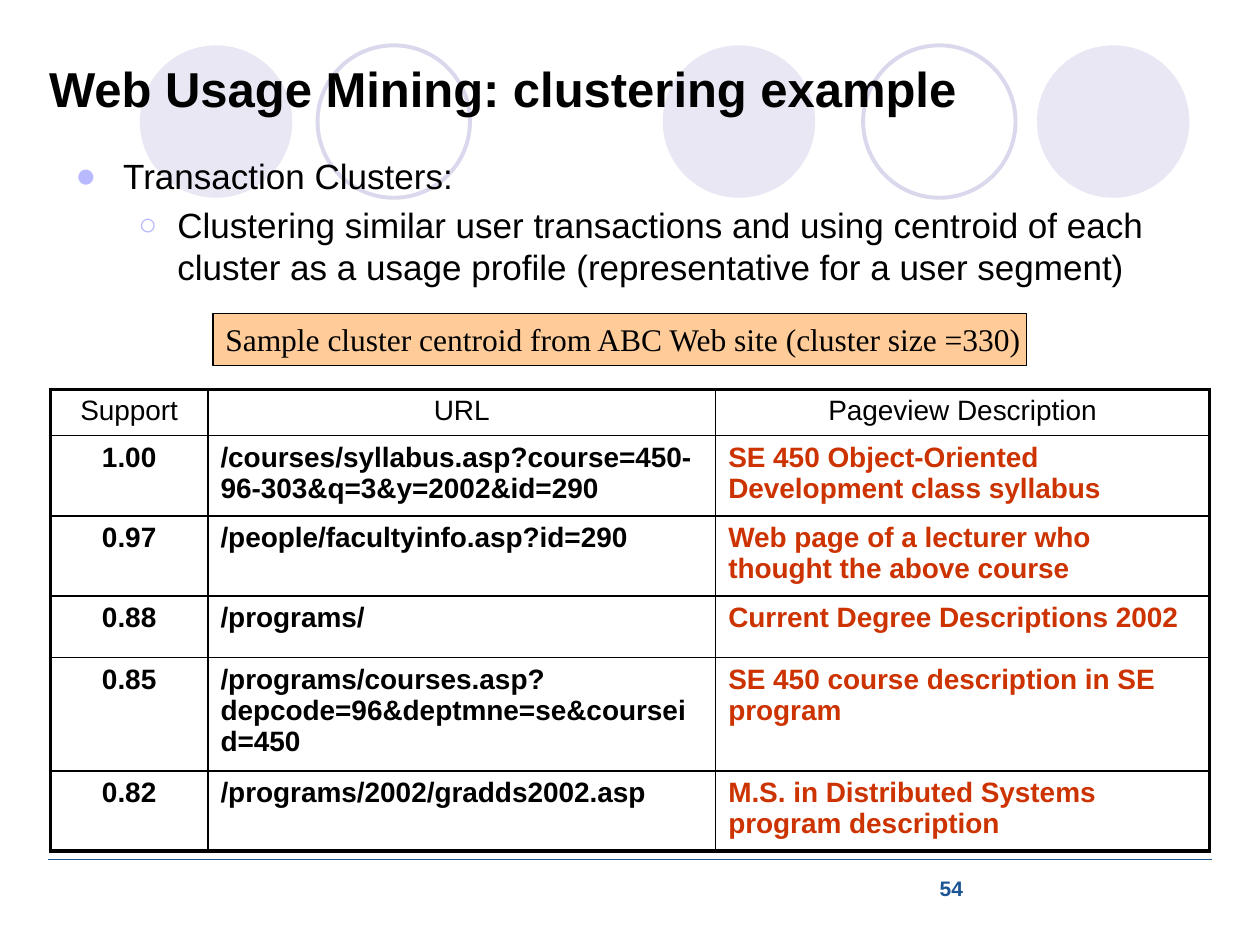
import dataclasses

import lxml.etree
import pptx
import pptx.dml.color
import pptx.enum.shapes
import pptx.enum.text
import pptx.oxml.ns
import pptx.util

Inches = pptx.util.Inches
Pt = pptx.util.Pt
Align = pptx.enum.text.PP_ALIGN
Anchor = pptx.enum.text.MSO_ANCHOR
AutoSize = pptx.enum.text.MSO_AUTO_SIZE
qn = pptx.oxml.ns.qn


@dataclasses.dataclass(frozen=True)
class Theme:
    """Colours, fonts and type sizes of the slide."""
    ink: str = "000000"
    accent: str = "CC3300"
    rule: str = "1B5595"
    disc: str = "E8E7F3"
    ring: str = "D9D8EC"
    bullet: str = "B9B9FF"
    banner: str = "FFCC99"
    sans: str = "Arial"
    serif: str = "Times New Roman"
    title_size: int = 28
    body_size: int = 20
    banner_size: int = 18
    table_size: int = 16
    number_size: int = 12
    thin: float = 1
    thick: float = 2.25


THEME = Theme()
CIRCLES = [(1.11, True), (2.52, False), (5.26, True), (6.85, False), (8.23, True)]
POINTS = [
    ("Transaction Clusters:", "●", 0.38, 0.38, 100),
    ("Clustering similar user transactions and using centroid of each cluster "
     "as a usage profile (representative for a user segment)", "○", 0.81, 0.31, 90),
]
COLUMN_WIDTHS = [1.25, 4.03, 3.92]
ROW_HEIGHTS = [0.34, 0.64, 0.63, 0.49, 0.84, 0.61]
PAGEVIEWS = [
    ("Support", "URL", "Pageview Description"),
    ("1.00", "/courses/syllabus.asp?course=450-96-303&q=3&y=2002&id=290",
     "SE 450 Object-Oriented Development class syllabus"),
    ("0.97", "/people/facultyinfo.asp?id=290",
     "Web page of a lecturer who thought the above course"),
    ("0.88", "/programs/", "Current Degree Descriptions 2002"),
    ("0.85", "/programs/courses.asp?depcode=96&deptmne=se&courseid=450",
     "SE 450 course description in SE program"),
    ("0.82", "/programs/2002/gradds2002.asp",
     "M.S. in Distributed Systems program description"),
]


def rgb(colour):
    """Turn a hex string into a colour."""
    return pptx.dml.color.RGBColor.from_string(colour)


def style(paragraph, size, colour=THEME.ink, bold=False, font=THEME.sans, align=Align.LEFT):
    """Align a paragraph and format its runs."""
    paragraph.alignment = align
    for run in paragraph.runs:
        run.font.size = Pt(size)
        run.font.name = font
        run.font.bold = bold
        run.font.color.rgb = rgb(colour)


def add_bullet(paragraph, mark, indent, hang, percent):
    """Give a paragraph a coloured bullet and a hanging indent."""
    properties = paragraph._p.get_or_add_pPr()
    properties.set("marL", str(Inches(indent)))
    properties.set("indent", str(-Inches(hang)))
    colour = lxml.etree.SubElement(properties, qn("a:buClr"))
    lxml.etree.SubElement(colour, qn("a:srgbClr"), val=THEME.bullet)
    lxml.etree.SubElement(properties, qn("a:buSzPct"), val=str(percent * 1000))
    lxml.etree.SubElement(properties, qn("a:buFont"), typeface=THEME.sans)
    lxml.etree.SubElement(properties, qn("a:buChar"), char=mark)


def add_border(cell, side, width):
    """Draw one edge of a table cell."""
    edge = lxml.etree.SubElement(cell._tc.get_or_add_tcPr(), qn("a:ln" + side), w=str(Pt(width)))
    fill = lxml.etree.SubElement(edge, qn("a:solidFill"))
    lxml.etree.SubElement(fill, qn("a:srgbClr"), val=THEME.ink)


def draw_circles(slide, top, size):
    """Place the row of decorative discs and rings."""
    for left, filled in CIRCLES:
        circle = slide.shapes.add_shape(
            pptx.enum.shapes.MSO_SHAPE.OVAL, Inches(left), top, size, size)
        circle.shadow.inherit = False
        if filled:
            circle.fill.solid()
            circle.fill.fore_color.rgb = rgb(THEME.disc)
            circle.line.fill.background()
        else:
            circle.fill.background()
            circle.line.color.rgb = rgb(THEME.ring)
            circle.line.width = Pt(THEME.thick)


def draw_title(slide, left, top, width, height):
    """Place the title in front of the circles."""
    title = slide.shapes.title
    title.left, title.top, title.width, title.height = left, top, width, height
    frame = title.text_frame
    frame.text = "Web Usage Mining: clustering example"
    frame.auto_size = AutoSize.NONE
    frame.vertical_anchor = Anchor.MIDDLE
    style(frame.paragraphs[0], THEME.title_size, bold=True)
    slide.shapes._spTree.append(title.element)


def draw_points(slide, left, top, width, height):
    """Place the two-level bullet list."""
    frame = slide.shapes.add_textbox(left, top, width, height).text_frame
    frame.word_wrap = True
    frame.text = "\n".join(point[0] for point in POINTS)
    for level, (paragraph, point) in enumerate(zip(frame.paragraphs, POINTS)):
        paragraph.level = level
        paragraph.space_before = Pt(4)
        style(paragraph, THEME.body_size)
        add_bullet(paragraph, *point[1:])


def draw_pageviews(slide, left, top, width, height):
    """Place the table of pageviews with a heavy outer frame."""
    table = slide.shapes.add_table(
        len(PAGEVIEWS), len(COLUMN_WIDTHS), left, top, width, height).table
    table.first_row = table.horz_banding = False
    for column, column_width in zip(table.columns, COLUMN_WIDTHS):
        column.width = Inches(column_width)
    last_row, last_column = len(PAGEVIEWS) - 1, len(COLUMN_WIDTHS) - 1
    for r, record in enumerate(PAGEVIEWS):
        table.rows[r].height = Inches(ROW_HEIGHTS[r])
        for c, value in enumerate(record):
            cell = table.cell(r, c)
            cell.text = value
            header = r == 0
            style(cell.text_frame.paragraphs[0], THEME.table_size,
                  THEME.accent if c == last_column and not header else THEME.ink,
                  bold=not header,
                  align=Align.CENTER if header or c == 0 else Align.LEFT)
            outer = {"L": c == 0, "R": c == last_column, "T": header, "B": r == last_row}
            for side, heavy in outer.items():
                add_border(cell, side, THEME.thick if heavy else THEME.thin)
            cell.fill.background()


def draw_banner(slide, left, top, width, height):
    """Place the caption box above the table."""
    banner = slide.shapes.add_shape(
        pptx.enum.shapes.MSO_SHAPE.RECTANGLE, left, top, width, height)
    banner.shadow.inherit = False
    banner.fill.solid()
    banner.fill.fore_color.rgb = rgb(THEME.banner)
    banner.line.color.rgb = rgb(THEME.ink)
    banner.line.width = Pt(0.75)
    frame = banner.text_frame
    frame.text = "Sample cluster centroid from ABC Web site (cluster size =330)"
    frame.word_wrap = False
    frame.vertical_anchor = Anchor.TOP
    style(frame.paragraphs[0], THEME.banner_size, font=THEME.serif)


def draw_footer(slide, left, top, width):
    """Place the footer rule and the slide number."""
    rule = slide.shapes.add_connector(
        pptx.enum.shapes.MSO_CONNECTOR.STRAIGHT, left, top, left + width, top)
    rule.line.color.rgb = rgb(THEME.rule)
    rule.line.width = Pt(0.75)
    lxml.etree.SubElement(rule._element.spPr, qn("a:effectLst"))
    frame = slide.shapes.add_textbox(
        Inches(7.36), top + Inches(0.08), Inches(2.33), Inches(0.34)).text_frame
    frame.word_wrap = True
    frame.text = "54"
    style(frame.paragraphs[0], THEME.number_size, THEME.rule, bold=True)


def main():
    """Build and save the slide."""
    deck = pptx.Presentation()
    deck.slide_width, deck.slide_height = Inches(10), Inches(7.5)
    slide = deck.slides.add_slide(deck.slide_layouts[5])
    draw_circles(slide, Inches(0.36), Inches(1.21))
    draw_footer(slide, Inches(0.38), Inches(6.82), Inches(9.24))
    draw_title(slide, Inches(0.29), Inches(0.33), Inches(9.15), Inches(0.74))
    draw_points(slide, Inches(0.5), Inches(1.18), Inches(8.94), Inches(1.39))
    draw_pageviews(slide, Inches(0.4), Inches(3.09), Inches(9.2), Inches(sum(ROW_HEIGHTS)))
    draw_banner(slide, Inches(1.69), Inches(2.49), Inches(6.46), Inches(0.41))
    deck.save("out.pptx")


if __name__ == "__main__":
    main()
